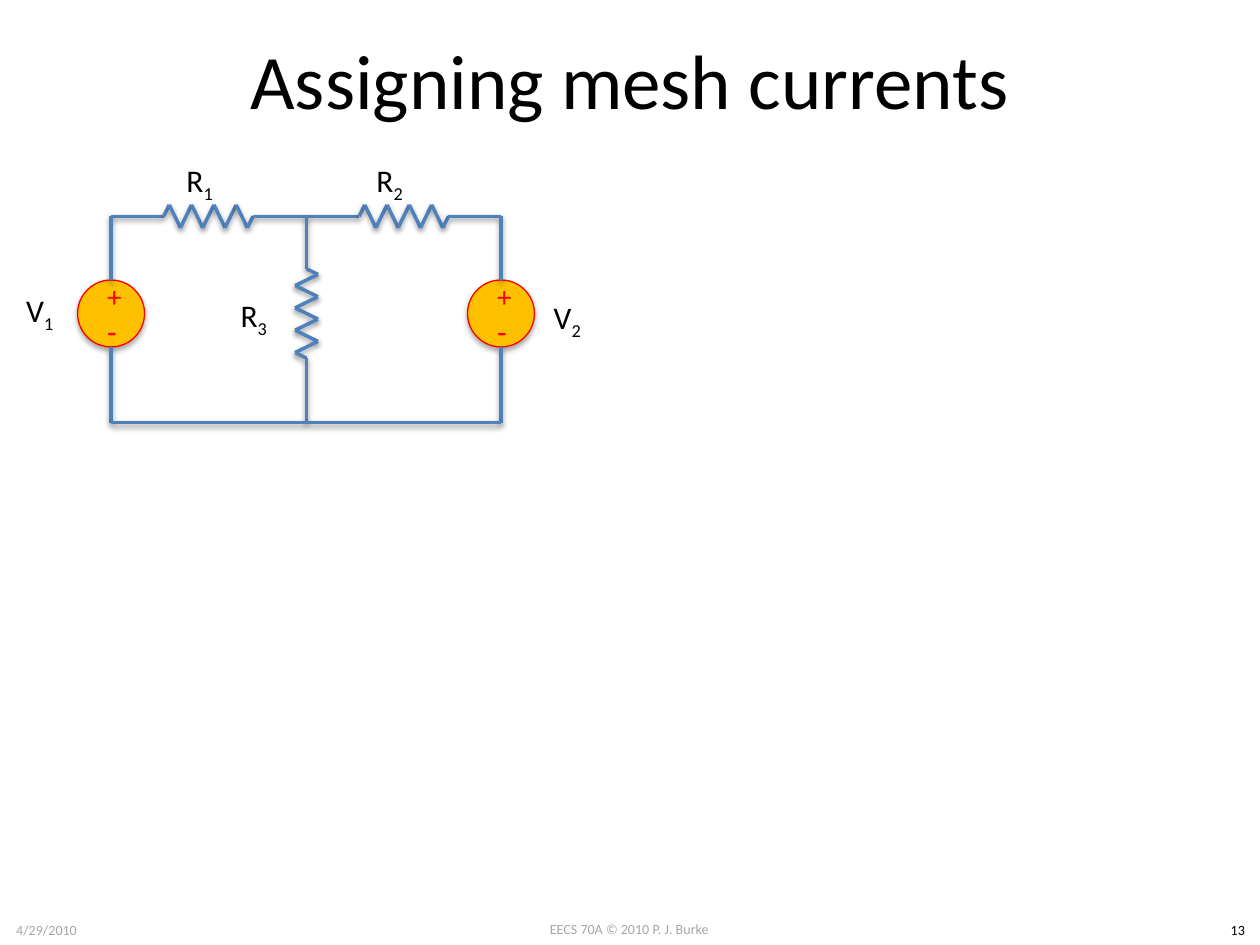
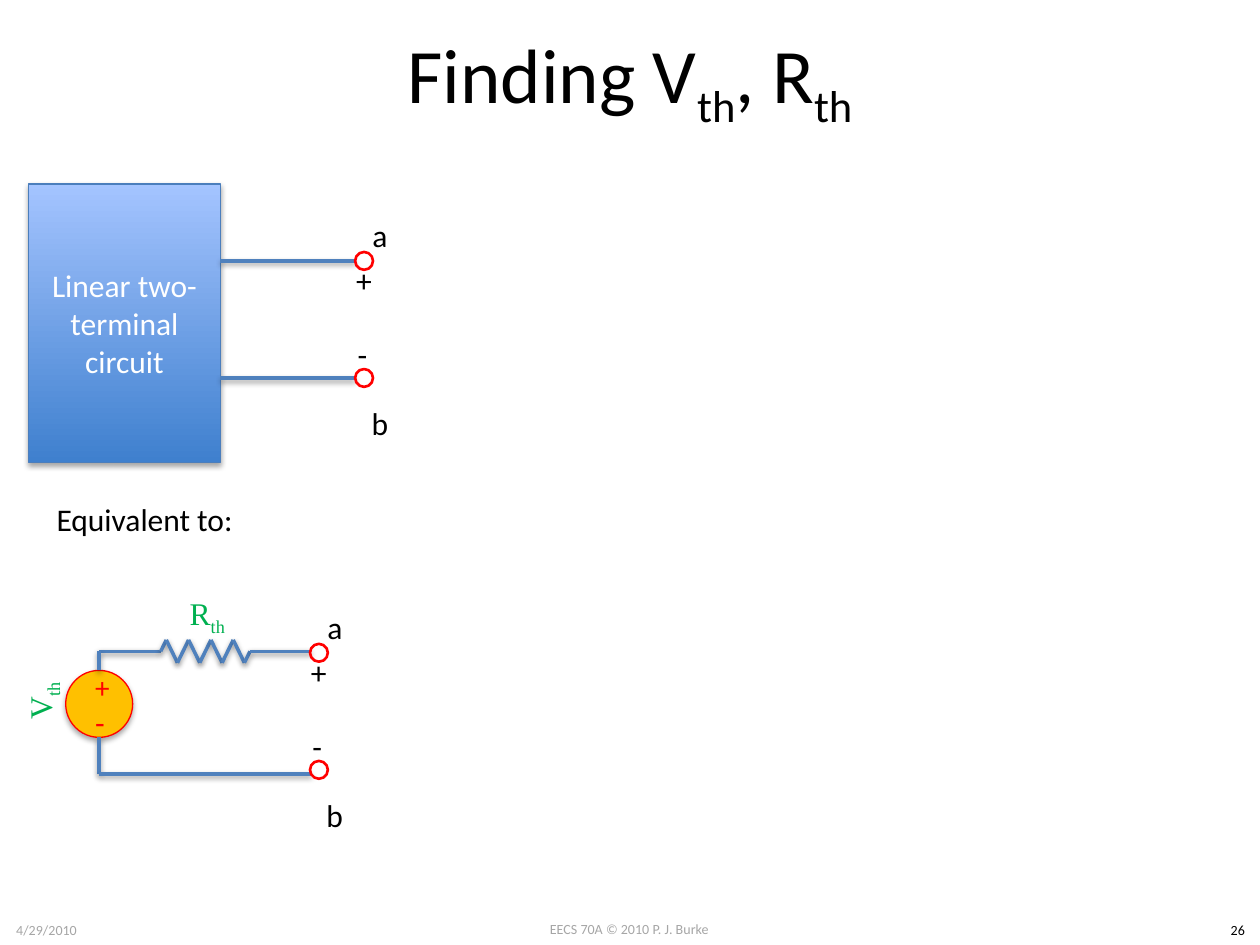
from pptx import Presentation
from pptx.dml.color import RGBColor
from pptx.enum.shapes import MSO_CONNECTOR, MSO_SHAPE
from pptx.enum.text import MSO_ANCHOR, PP_ALIGN
from pptx.oxml import parse_xml
from pptx.oxml.ns import nsdecls
from pptx.util import Cm, Pt

STRAIGHT = MSO_CONNECTOR.STRAIGHT
OVAL, RECTANGLE = MSO_SHAPE.OVAL, MSO_SHAPE.RECTANGLE
TOP, MIDDLE = MSO_ANCHOR.TOP, MSO_ANCHOR.MIDDLE
LEFT, CENTER = PP_ALIGN.LEFT, PP_ALIGN.CENTER

BLACK = RGBColor(0x00, 0x00, 0x00)
WHITE = RGBColor(0xFF, 0xFF, 0xFF)
GRAY = RGBColor(0xA6, 0xA6, 0xA6)
RED = RGBColor(0xFF, 0x00, 0x00)
AMBER = RGBColor(0xFF, 0xC0, 0x00)
GREEN = RGBColor(0x00, 0xB0, 0x50)
WIRE_BLUE = RGBColor(0x4F, 0x81, 0xBD)
EDGE_BLUE = RGBColor(0x4B, 0x7E, 0xBC)
DEEP_BLUE = RGBColor(0x3F, 0x80, 0xCE)
PALE_BLUE = RGBColor(0xA4, 0xC4, 0xFF)

SOURCE_SIZE = 1.35
TERMINAL_SIZE = 0.36
TERMINAL_GAP = 2.36
ZIGZAG_SPAN = 1.8
ZIGZAG_HEIGHT = 0.23
ZIGZAG_PEAKS = 8

shadowed = []


def write(slide, text, at=None, shape=None, size=18, font="Calibri", color=BLACK,
          align=LEFT, anchor=TOP, wrap=False, rotation=0):
    shape = shape or slide.shapes.add_textbox(*map(Cm, at))
    shape.rotation = rotation
    frame = shape.text_frame
    frame.word_wrap = wrap
    frame.vertical_anchor = anchor
    paragraph = frame.paragraphs[0]
    paragraph.alignment = align
    for index, piece in enumerate(text.split("_")):
        if piece:
            run = paragraph.add_run()
            run.text = piece
            run.font.size = Pt(size)
            run.font.name = font
            run.font.color.rgb = color
            if index % 2:
                run.font._element.set("baseline", "-25000")


def wire(slide, *points):
    for start, end in zip(points, points[1:]):
        segment = slide.shapes.add_connector(STRAIGHT, *map(Cm, start + end))
        segment.line.color.rgb = WIRE_BLUE
        segment.line.width = Pt(2)
        shadowed.append((segment, 20000, 38000))


prs = Presentation()
prs.slide_width, prs.slide_height = Cm(25.4), Cm(19.05)

slides = []
for title, number in [("Assigning mesh currents", "13"), ("Finding V_th_, R_th_", "26")]:
    slide = prs.slides.add_slide(prs.slide_layouts[6])
    write(slide, title, (1.27, 0, 22.86, 3.18), size=44, align=CENTER, anchor=MIDDLE, wrap=True)
    for footer, at, color in [
        ("EECS 70A © 2010 P. J. Burke", (9.73, 18.44, 5.92, 0.61), GRAY),
        ("4/29/2010", (0, 18.46, 1.88, 0.61), GRAY),
        (number, (24.51, 18.46, 0.89, 0.61), BLACK),
    ]:
        write(slide, footer, at, size=8, color=color, align=CENTER)
    slides.append(slide)
mesh, thevenin = slides

left, middle, right = 2.24, 6.18, 10.1
top, bottom, mesh_center = 4.36, 8.52, 6.32
loop_left, loop_right, loop_top, loop_bottom = 2, 6.27, 13.13, 15.6

for slide, start, end, (x, y) in [
    (mesh, (left, top), (middle, top), (4.2, top)),
    (mesh, (middle, top), (right, top), (8.14, top)),
    (mesh, (middle, top), (middle, bottom), (middle, mesh_center)),
    (thevenin, (loop_left, loop_top), (loop_right, loop_top), (4.14, loop_top)),
]:
    pitch = ZIGZAG_SPAN / ZIGZAG_PEAKS
    zigzag = [(-ZIGZAG_SPAN / 2, 0)]
    for peak in range(ZIGZAG_PEAKS):
        side = 1 if peak % 2 else -1
        zigzag.append(((peak - (ZIGZAG_PEAKS - 1) / 2) * pitch, side * ZIGZAG_HEIGHT))
    zigzag.append((ZIGZAG_SPAN / 2, 0))
    vertical = start[0] == end[0]
    bends = [(x - across, y + along) if vertical else (x + along, y + across)
             for along, across in zigzag]
    wire(slide, start, *bends, end)

for slide, x, y, wire_top, wire_bottom in [
    (mesh, left, mesh_center, top, bottom),
    (mesh, right, mesh_center, top, bottom),
    (thevenin, loop_left, 14.19, loop_top, loop_bottom),
]:
    radius = SOURCE_SIZE / 2
    source = slide.shapes.add_shape(
        OVAL, Cm(x - radius), Cm(y - radius), Cm(SOURCE_SIZE), Cm(SOURCE_SIZE))
    source.fill.solid()
    source.fill.fore_color.rgb = AMBER
    source.line.color.rgb = RED
    source.line.width = Pt(0.75)
    shadowed.append((source, 23000, 35000))
    for sign, drop, size in [("+", -0.77, 16.6), ("-", -0.06, 18)]:
        write(slide, sign, (x - 0.33, y + drop, 0.66, 0.84), size=size, color=RED,
              align=CENTER, anchor=MIDDLE)
    wire(slide, (x, wire_top), (x, y - radius))
    wire(slide, (x, y + radius), (x, wire_bottom))

wire(mesh, (left, bottom), (right, bottom))
for label, x, y, width in [
    ("R_1", 3.51, 3.12, 1.07),
    ("R_2", 7.34, 3.12, 1.07),
    ("R_3", 4.6, 5.84, 1.07),
    ("V_1", 0.28, 5.74, 1.09),
    (" V_2", 10.77, 5.89, 1.24),
]:
    write(mesh, label, (x, y, width, 1.02))

circuit = thevenin.shapes.add_shape(RECTANGLE, Cm(0.58), Cm(3.71), Cm(3.86), Cm(5.61))
circuit.fill.gradient()
circuit.fill.gradient_angle = 90
for stop, color in zip(circuit.fill.gradient_stops, (DEEP_BLUE, PALE_BLUE)):
    stop.color.rgb = color
circuit.line.color.rgb = EDGE_BLUE
circuit.line.width = Pt(0.75)
shadowed.append((circuit, 23000, 35000))
write(thevenin, "Linear two-terminal circuit", shape=circuit, color=WHITE,
      align=CENTER, anchor=MIDDLE, wrap=True)
for y in (5.26, 7.62):
    wire(thevenin, (4.44, y), (7.16, y))
wire(thevenin, (loop_left, loop_bottom), (loop_right, loop_bottom))

for x, upper in [(7.34, 5.26), (6.43, 13.16)]:
    lower = upper + TERMINAL_GAP
    for y in (upper, lower):
        terminal = thevenin.shapes.add_shape(
            OVAL, Cm(x - TERMINAL_SIZE / 2), Cm(y - TERMINAL_SIZE / 2),
            Cm(TERMINAL_SIZE), Cm(TERMINAL_SIZE))
        terminal.shadow.inherit = False
        terminal.fill.background()
        terminal.line.color.rgb = RED
        terminal.line.width = Pt(1.5)
    for label, shift, label_top, width in [
        ("a", -0.08, upper - 1.02, 0.81),
        ("b", -0.1, lower + 0.41, 0.86),
        ("+", -0.41, upper - 0.13, 0.84),
        ("-", -0.38, lower - 0.99, 0.71),
    ]:
        write(thevenin, label, (x + shift, label_top, width, 1.02))

write(thevenin, "Equivalent to:", (0.89, 9.96, 4.11, 1.02))
for label, x, y, rotation in [("R_th", 2.67, 11.48, 0), ("V_th", -0.66, 13.21, 270)]:
    write(thevenin, label, (x, y, 3.02, 1.85), font="Times New Roman", color=GREEN,
          align=CENTER, anchor=MIDDLE, wrap=True, rotation=rotation)

for part, distance, opacity in shadowed:
    part._element.spPr.append(parse_xml(
        f'<a:effectLst {nsdecls("a")}>'
        f'<a:outerShdw blurRad="40000" dist="{distance}" dir="5400000" rotWithShape="0">'
        f'<a:srgbClr val="000000"><a:alpha val="{opacity}"/></a:srgbClr>'
        '</a:outerShdw></a:effectLst>'))

prs.save("out.pptx")
